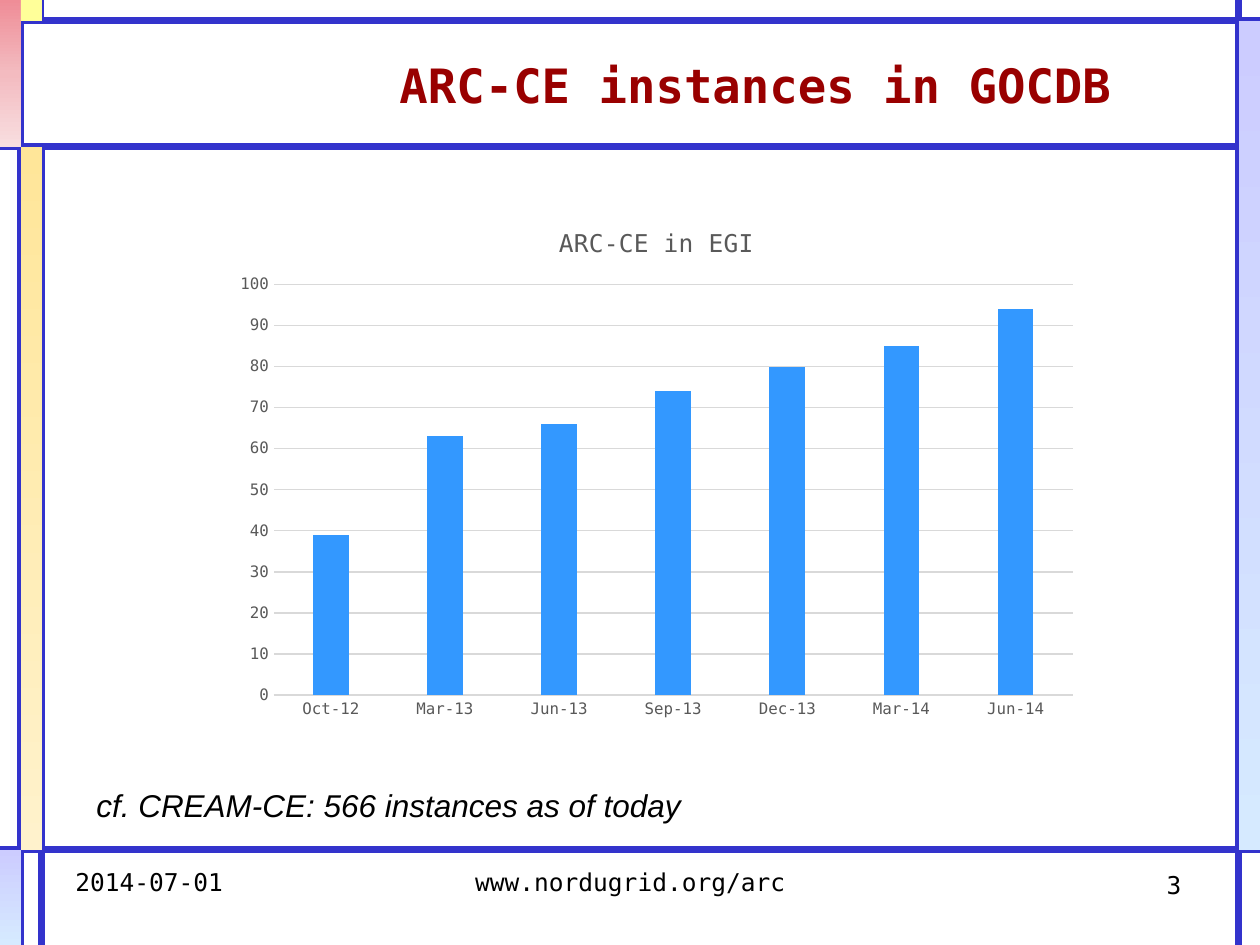
import copy
import lxml.etree
import pptx
import pptx.chart.data
import pptx.dml.color
import pptx.enum.chart
import pptx.enum.shapes
import pptx.enum.text
import pptx.oxml.ns
import pptx.util

SCALE = 914400 / 126  # EMU per px
WIDTH, HEIGHT = 1260, 945
THEME = {
    "frame": "3333CC", "title": "990000", "text": "000000",
    "muted": "595959", "grid": "D9D9D9", "bar": "3398FF",
    "blue": ["CCCCFF", "D6EAFF"],
    "pink": ["EF8D97", "F3BBC0", "F8DEE0"],
    "sand": ["FFE699", "FFF2CC"],
    "lemon": ["FFFF99"],
    "mono": "DejaVu Sans Mono", "sans": "Arial",
    "title_size": 27, "note_size": 18, "small_size": 14, "axis_size": 9,
}
rgb = pptx.dml.color.RGBColor.from_string
shapes = pptx.enum.shapes.MSO_SHAPE
align = pptx.enum.text.PP_ALIGN


def px(*lengths):
    """Turn px lengths into EMU."""
    return [round(length * SCALE) for length in lengths]


def style_font(font, size, color, name=THEME["mono"], bold=False, italic=False):
    font.size = pptx.util.Pt(THEME[size])
    font.color.rgb = rgb(THEME[color])
    font.name = name
    font.bold = bold
    font.italic = italic


deck = pptx.Presentation()
deck.slide_width, deck.slide_height = px(WIDTH, HEIGHT)
page = deck.slides.add_slide(deck.slide_layouts[6])

# Frame: rules first, colour bands over them
LEFT, INNER, RIGHT = 21, 42, 1239
TOP, HEAD, FOOT = 21, 147, 850
rules = [
    (0, HEAD, WIDTH, HEAD, 4),
    (0, TOP, WIDTH, TOP, 4),
    (LEFT, 0, LEFT, HEIGHT, 4),
    (0, FOOT, WIDTH, FOOT, 4),
    (RIGHT, 0, RIGHT, HEIGHT, 4),
    (INNER, 0, INNER, TOP, 2.25),
    (INNER, HEAD, INNER, HEIGHT, 4),
]
for *ends, weight in rules:
    rule = page.shapes.add_connector(
        pptx.enum.shapes.MSO_CONNECTOR.STRAIGHT, *px(*ends))
    rule.line.color.rgb = rgb(THEME["frame"])
    rule.line.width = pptx.util.Pt(weight)
    lxml.etree.SubElement(rule._element.spPr, pptx.oxml.ns.qn("a:effectLst"))

bands = [
    (RIGHT, TOP, WIDTH, FOOT, "blue"),
    (0, 0, LEFT, HEAD, "pink"),
    (0, FOOT, LEFT, HEIGHT, "blue"),
    (LEFT, 0, INNER, TOP, "lemon"),
    (LEFT, HEAD, INNER, FOOT, "sand"),
]
for x1, y1, x2, y2, tint in bands:
    band = page.shapes.add_shape(shapes.RECTANGLE, *px(x1, y1, x2 - x1, y2 - y1))
    band.shadow.inherit = False
    band.line.fill.background()
    colors = THEME[tint]
    if len(colors) == 1:
        band.fill.solid()
        band.fill.fore_color.rgb = rgb(colors[0])
        continue
    band.fill.gradient()
    band.fill.gradient_angle = 270
    stop_list = band._element.spPr.find(".//" + pptx.oxml.ns.qn("a:gsLst"))
    for _ in colors[2:]:
        stop_list.append(copy.deepcopy(stop_list[-1]))
    for i, (stop, color) in enumerate(zip(band.fill.gradient_stops, colors)):
        stop.position = i / (len(colors) - 1)
        stop.color.rgb = rgb(color)

# Chart
data = pptx.chart.data.CategoryChartData()
data.categories = ["Oct-12", "Mar-13", "Jun-13", "Sep-13", "Dec-13", "Mar-14", "Jun-14"]
data.add_series("ARC-CE in EGI", [39, 63, 66, 74, 80, 85, 94])
chart = page.shapes.add_chart(
    pptx.enum.chart.XL_CHART_TYPE.COLUMN_CLUSTERED, *px(223, 204, 867, 525), data).chart
style_font(chart.font, "axis_size", "muted")
chart.has_legend = False
chart.has_title = True
span = chart.chart_title.text_frame.paragraphs[0].add_run()
span.text = "ARC-CE in EGI"
style_font(span.font, "small_size", "muted")

plot = chart.plots[0]
plot.gap_width, plot.overlap = 219, -27
plot.vary_by_categories = False
bars = plot.series[0].format.fill
bars.solid()
bars.fore_color.rgb = rgb(THEME["bar"])

months, counts = chart.category_axis, chart.value_axis
for axis in (months, counts):
    axis.major_tick_mark = axis.minor_tick_mark = pptx.enum.chart.XL_TICK_MARK.NONE
    style_font(axis.tick_labels.font, "axis_size", "muted")
counts.minimum_scale, counts.maximum_scale, counts.major_unit = 0, 100, 10
counts.format.line.fill.background()
for line in (months.format.line, counts.major_gridlines.format.line):
    line.color.rgb = rgb(THEME["grid"])
    line.width = pptx.util.Pt(0.75)

# Texts
title = page.shapes.add_textbox(*px(311, 53, 888, 63))
date = page.shapes.add_textbox(*px(63, 861, 294, 65))
number = page.shapes.add_shape(shapes.ROUNDED_RECTANGLE, *px(903, 861, 294, 65))
number.shadow.inherit = False
number.fill.background()
number.line.fill.background()
address = page.shapes.add_textbox(*px(431, 861, 399, 65))
note = page.shapes.add_textbox(*px(84, 780, 645, 50))
texts = [
    (title, "ARC-CE instances in GOCDB", align.CENTER,
     dict(size="title_size", color="title", bold=True)),
    (date, "2014-07-01", align.LEFT, dict(size="small_size", color="text")),
    (number, "3", align.RIGHT, dict(size="small_size", color="text")),
    (address, "www.nordugrid.org/arc", align.CENTER, dict(size="small_size", color="text")),
    (note, "cf. CREAM-CE: 566 instances as of today", align.LEFT,
     dict(size="note_size", color="text", name=THEME["sans"], italic=True)),
]
for box, words, alignment, look in texts:
    frame = box.text_frame
    frame.word_wrap = True
    frame.vertical_anchor = pptx.enum.text.MSO_ANCHOR.TOP
    para = frame.paragraphs[0]
    para.alignment = alignment
    span = para.add_run()
    span.text = words
    style_font(span.font, **look)
title.text_frame.vertical_anchor = pptx.enum.text.MSO_ANCHOR.MIDDLE
note.text_frame.auto_size = pptx.enum.text.MSO_AUTO_SIZE.SHAPE_TO_FIT_TEXT

deck.save("out.pptx")
